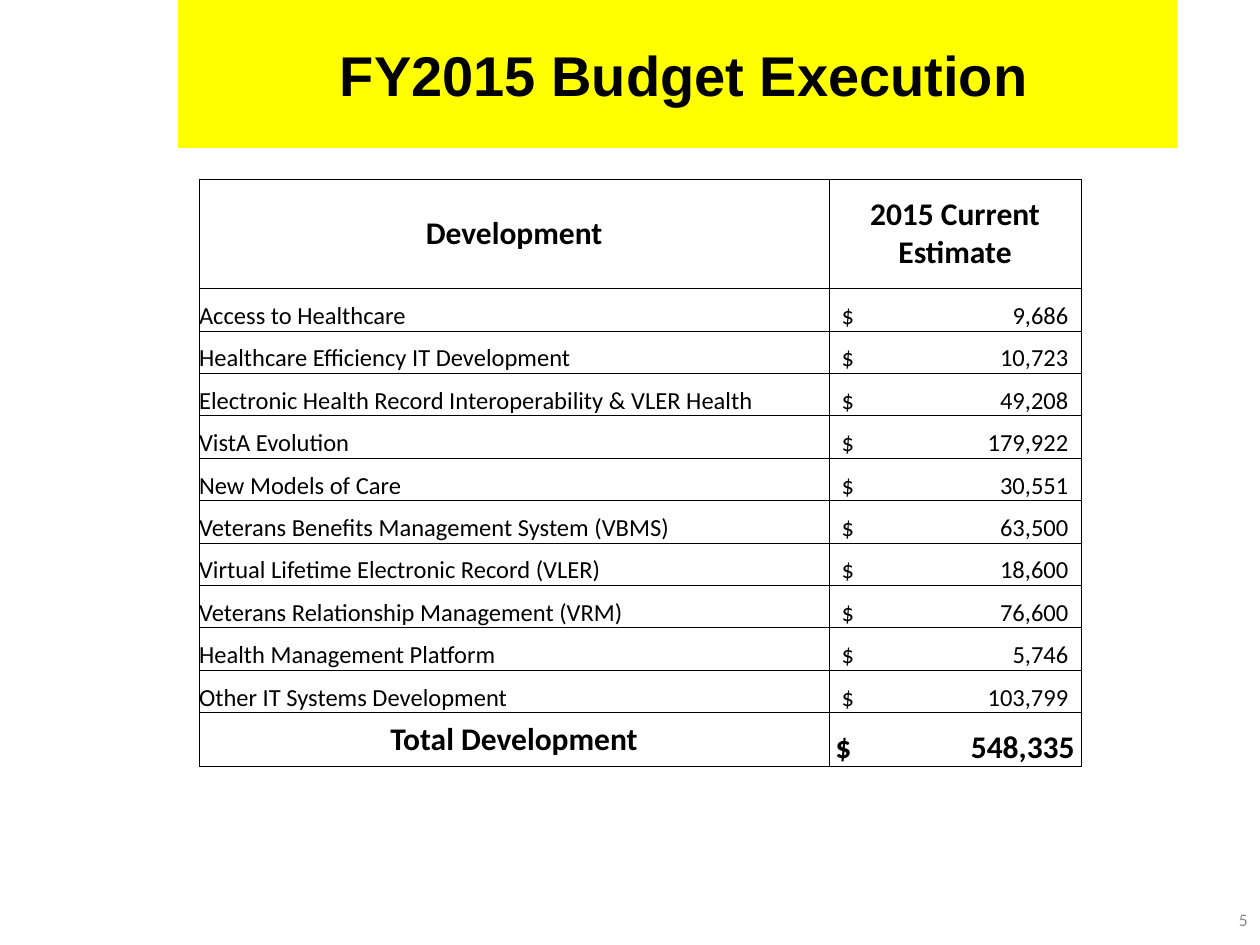
import pptx
import pptx.util
import pptx.dml.color
import pptx.enum.text
from lxml import etree

Inches, Pt = pptx.util.Inches, pptx.util.Pt
Align, Anchor = pptx.enum.text.PP_ALIGN, pptx.enum.text.MSO_ANCHOR
NS = "http://schemas.openxmlformats.org/drawingml/2006/main"

TITLE = "FY2015 Budget Execution"
PAGE = "5"
HEADS = ["Development", "2015 Current Estimate"]
ITEMS = [
    ("Access to Healthcare", 9686),
    ("Healthcare Efficiency IT Development", 10723),
    ("Electronic Health Record Interoperability & VLER Health", 49208),
    ("VistA Evolution", 179922),
    ("New Models of Care", 30551),
    ("Veterans Benefits Management System (VBMS)", 63500),
    ("Virtual Lifetime Electronic Record (VLER)", 18600),
    ("Veterans Relationship Management (VRM)", 76600),
    ("Health Management Platform", 5746),
    ("Other IT Systems Development", 103799),
]
TOTAL = ("Total Development", sum(cost for _, cost in ITEMS))
WIDTHS = [5, 2]
TOP, FOOT, HIGH = 0.87, 0.43, 4.67


def color(code):
    return pptx.dml.color.RGBColor.from_string(code)


def write(para, text, size, font="Calibri", bold=False, ink="000000"):
    run = para.add_run()
    run.text = text
    run.font.name, run.font.size, run.font.bold = font, Pt(size), bold
    run.font.color.rgb = color(ink)


def sub(node, tag, **attrs):
    return etree.SubElement(node, f"{{{NS}}}{tag}", attrs)


def frame(cell):
    """Give a cell thin black borders and no fill."""
    props = cell._tc.get_or_add_tcPr()
    for side in ("lnL", "lnR", "lnT", "lnB"):
        line = sub(props, side, w=str(Pt(0.5)))
        sub(sub(line, "solidFill"), "srgbClr", val="000000")
    cell.fill.background()


def fill(cell, text, size, bold, align, anchor, inset=0):
    cell.margin_left = Inches(inset)
    cell.margin_right = cell.margin_top = cell.margin_bottom = 0
    cell.vertical_anchor = anchor
    para = cell.text_frame.paragraphs[0]
    para.alignment = align
    if "\t" in text:
        tabs = sub(para._p.get_or_add_pPr(), "tabLst")
        # The right tab leaves the same gap as the left inset.
        stop = Inches(WIDTHS[1] - 2 * inset)
        sub(tabs, "tab", pos=str(stop), algn="r")
    write(para, text, size, bold=bold)
    frame(cell)


def money(cost):
    return f"$\t{cost:,}"


deck = pptx.Presentation()
deck.slide_width, deck.slide_height = Inches(10), Inches(7.5)
slide = deck.slides.add_slide(deck.slide_layouts[5])

title = slide.shapes.title
title.left, title.top = Inches(1.42), Inches(0)
title.width, title.height = Inches(7.92), Inches(1.17)
title.fill.solid()
title.fill.fore_color.rgb = title.line.color.rgb = color("FFFF00")
title.line.width = Pt(0.75)
body = title.text_frame
body.vertical_anchor = Anchor.MIDDLE
body.margin_left = Inches(0.2)
body.paragraphs[0].alignment = Align.CENTER
write(body.paragraphs[0], TITLE, 32, "Arial", True)

grid = slide.shapes.add_table(
    len(ITEMS) + 2, 2, Inches(1.58), Inches(1.42), Inches(sum(WIDTHS)), Inches(HIGH)
).table
grid.first_row = grid.horz_banding = False
for col, width in zip(grid.columns, WIDTHS):
    col.width = Inches(width)
step = (HIGH - TOP - FOOT) / len(ITEMS)
for row, high in zip(grid.rows, [TOP] + [step] * len(ITEMS) + [FOOT]):
    row.height = Inches(high)

for col, head in enumerate(HEADS):
    fill(grid.cell(0, col), head, 18, True, Align.CENTER, Anchor.MIDDLE)
for row, (name, cost) in enumerate(ITEMS, 1):
    fill(grid.cell(row, 0), name, 14, False, Align.LEFT, Anchor.BOTTOM)
    fill(grid.cell(row, 1), money(cost), 14, False, Align.LEFT, Anchor.BOTTOM, 0.1)
last = len(ITEMS) + 1
fill(grid.cell(last, 0), TOTAL[0], 18, True, Align.CENTER, Anchor.MIDDLE)
fill(grid.cell(last, 1), money(TOTAL[1]), 18, True, Align.LEFT, Anchor.BOTTOM, 0.05)

page = slide.shapes.add_textbox(Inches(7.67), Inches(7.1), Inches(2.33), Inches(0.4))
page.text_frame.word_wrap = True
page.text_frame.vertical_anchor = Anchor.MIDDLE
page.text_frame.paragraphs[0].alignment = Align.RIGHT
write(page.text_frame.paragraphs[0], PAGE, 10, ink="8C8C8C")

deck.save("out.pptx")
